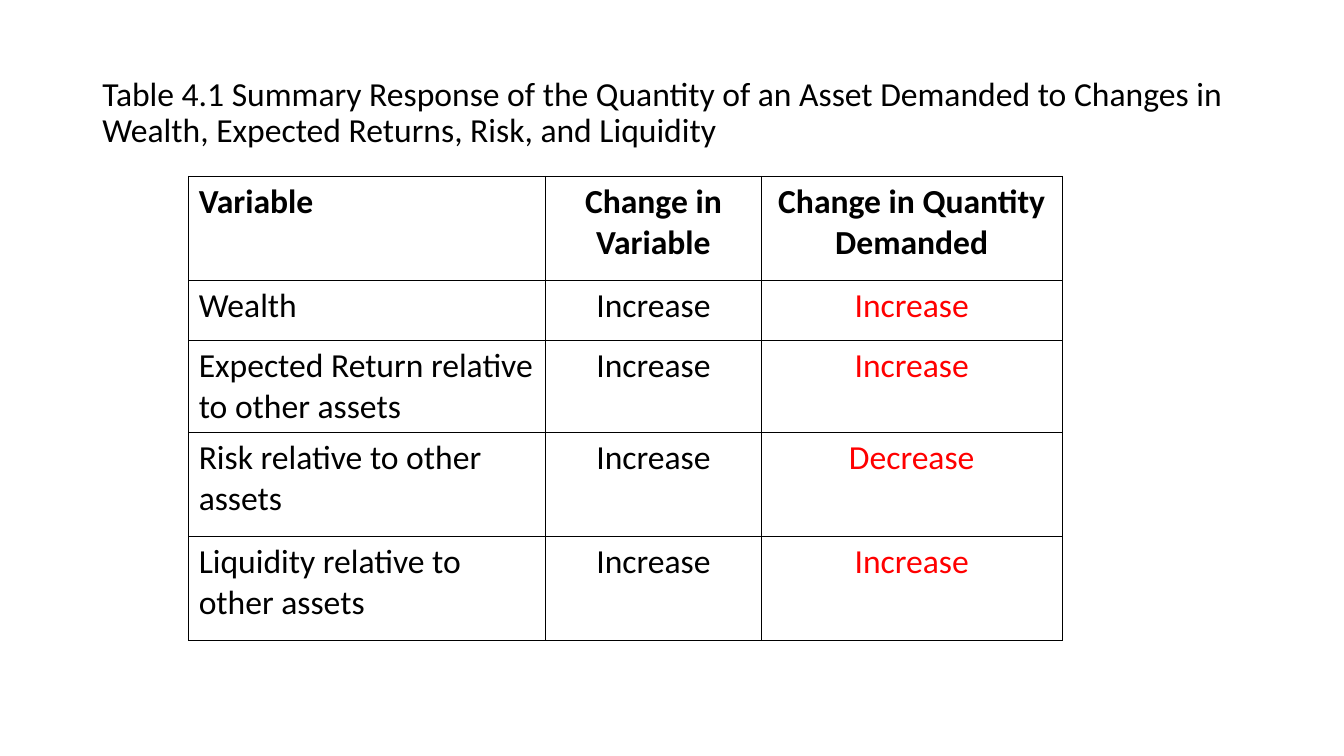
from lxml.etree import SubElement as Sub
from pptx import Presentation
from pptx.dml.color import RGBColor as RGB
from pptx.enum.text import MSO_ANCHOR as Anchor, PP_ALIGN as Align
from pptx.oxml.ns import qn
from pptx.util import Pt

BLACK, RED = "000000", "FF0000"
TITLE = ("Table 4.1 Summary Response of the Quantity of an Asset Demanded "
         "to Changes in Wealth, Expected Returns, Risk, and Liquidity")
ROWS = [
    ("Variable", "Change in Variable", "Change in Quantity Demanded"),
    ("Wealth", "Increase", "Increase"),
    ("Expected Return relative to other assets", "Increase", "Increase"),
    ("Risk relative to other assets", "Increase", "Decrease"),
    ("Liquidity relative to other assets", "Increase", "Increase"),
]
WIDTHS = (255, 154, 215)
HEIGHTS = (74.3, 43, 65.4, 74.3, 74.3)


def paint(hue):
    return RGB.from_string(hue)


def write(frame, text, size=24, hue=BLACK, bold=False, align=Align.LEFT,
          space=None):
    para = frame.paragraphs[0]
    para.alignment = align
    para.line_spacing = space
    run = para.add_run()
    run.text = text
    font = run.font
    font.name, font.size, font.bold = "Calibri", Pt(size), bold
    font.color.rgb = paint(hue)


def add_title(slide, text, left, top, width, height):
    frame = slide.shapes.add_textbox(
        Pt(left), Pt(top), Pt(width), Pt(height)).text_frame
    frame.word_wrap = True
    frame.vertical_anchor = Anchor.MIDDLE
    write(frame, text, space=0.9)


def edge(cell, hue=BLACK, width=1):
    props = cell._tc.get_or_add_tcPr()
    for side in ("lnL", "lnR", "lnT", "lnB"):
        line = Sub(props, qn("a:" + side), w=str(Pt(width)))
        fill = Sub(line, qn("a:solidFill"))
        Sub(fill, qn("a:srgbClr"), val=hue)


def add_grid(slide, rows, left, top):
    table = slide.shapes.add_table(
        len(rows), len(WIDTHS), Pt(left), Pt(top),
        Pt(sum(WIDTHS)), Pt(sum(HEIGHTS))).table
    table.horz_banding = False
    for col, width in zip(table.columns, WIDTHS):
        col.width = Pt(width)
    for row, height in zip(table.rows, HEIGHTS):
        row.height = Pt(height)
    for r, texts in enumerate(rows):
        for c, text in enumerate(texts):
            cell = table.cell(r, c)
            edge(cell)
            cell.fill.background()
            # Header is bold; the last column of the body is red
            write(cell.text_frame, text, bold=r == 0,
                  hue=RED if r and c == 2 else BLACK,
                  align=Align.CENTER if c else Align.LEFT)


def main():
    deck = Presentation()
    deck.slide_width, deck.slide_height = Pt(960), Pt(540)
    slide = deck.slides.add_slide(deck.slide_layouts[6])
    # Title
    add_title(slide, TITLE, 66, 28.75, 828, 104.4)
    # Summary table
    add_grid(slide, ROWS, 134.8, 126)
    deck.save("out.pptx")


if __name__ == "__main__":
    main()
